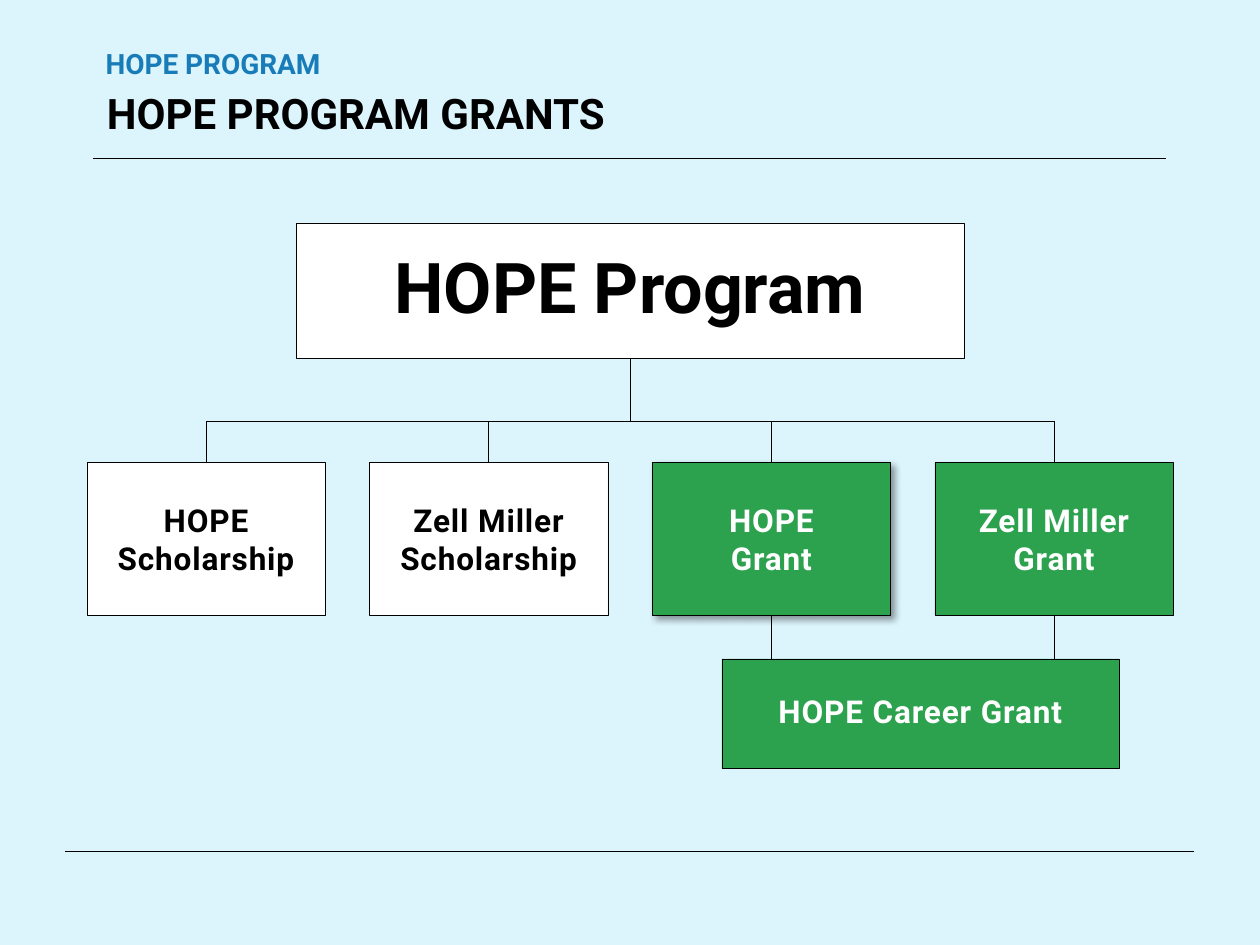
"""Build the HOPE Program Grants organisation chart slide."""
from dataclasses import dataclass

from lxml import etree
from pptx import Presentation
from pptx.dml.color import RGBColor
from pptx.enum.shapes import MSO_CONNECTOR, MSO_SHAPE
from pptx.enum.text import MSO_ANCHOR, PP_ALIGN
from pptx.oxml.ns import qn
from pptx.util import Inches, Pt

RECTANGLE = MSO_SHAPE.RECTANGLE
STRAIGHT = MSO_CONNECTOR.STRAIGHT
TOP, MIDDLE = MSO_ANCHOR.TOP, MSO_ANCHOR.MIDDLE
LEFT, CENTER = PP_ALIGN.LEFT, PP_ALIGN.CENTER
TOP_SIDE, BOTTOM_SIDE = 0, 2
UNIT = Inches(0.1)
COLUMNS, ROWS = 100, 75


@dataclass(frozen=True)
class Theme:
    font: str = "Roboto"
    background: RGBColor = RGBColor.from_string("DCF4FC")
    black: RGBColor = RGBColor.from_string("000000")
    white: RGBColor = RGBColor.from_string("FFFFFF")
    blue: RGBColor = RGBColor.from_string("187CB8")
    green: RGBColor = RGBColor.from_string("2CA14E")
    title_size: int = 24
    section_size: int = 16
    root_size: int = 40
    branch_size: int = 18
    rule_width: float = 0.5
    border_width: float = 0.25


theme = Theme()
presentation = Presentation()
presentation.slide_width = COLUMNS * UNIT
presentation.slide_height = ROWS * UNIT
slide = presentation.slides.add_slide(presentation.slide_layouts[6])
slide.background.fill.solid()
slide.background.fill.fore_color.rgb = theme.background


def write(shape, lines, size, color, align, anchor, inset, line_spacing, tracking=0):
    frame = shape.text_frame
    frame.word_wrap = True
    frame.vertical_anchor = anchor
    frame.margin_left = frame.margin_right = Inches(inset[0])
    frame.margin_top = frame.margin_bottom = Inches(inset[1])
    for index, line in enumerate(lines):
        paragraph = frame.add_paragraph() if index else frame.paragraphs[0]
        paragraph.alignment = align
        paragraph.line_spacing = line_spacing
        run = paragraph.add_run()
        run.text = line
        run.font.name = theme.font
        run.font.size = Pt(size)
        run.font.bold = True
        run.font.color.rgb = color
        if tracking:
            run._r.get_or_add_rPr().set("spc", str(tracking))


def draw_line(start_column, start_row, end_column, end_row):
    ends = [round(value * UNIT) for value in (start_column, start_row, end_column, end_row)]
    connector = slide.shapes.add_connector(STRAIGHT, *ends)
    connector.line.color.rgb = theme.black
    connector.line.width = Pt(theme.rule_width)
    etree.SubElement(connector._element.spPr, qn("a:effectLst"))
    return connector


draw_line(5.2, 67.6, 94.8, 67.6)
draw_line(7.4, 12.6, 92.5, 12.6)

headings = [
    ("HOPE PROGRAM GRANTS", 7.5, 6.7, 5.3, theme.title_size, theme.black, 0.07),
    ("HOPE PROGRAM", 7.4, 3.5, 4.2, theme.section_size, theme.blue, 0.05),
]
for text, column, row, height, size, color, inset in headings:
    bounds = [round(value * UNIT) for value in (column, row, 85, height)]
    heading = slide.shapes.add_textbox(*bounds)
    write(heading, [text], size, color, LEFT, TOP, (0.1, inset), 0.9)

branch_left, branch_top, branch_width, branch_height = 6.9, 36.7, 18.9, 12.15
branch_pitch = (74.2 - branch_left) / 3
bus_row = 33.45
branch_bottom = branch_top + branch_height
root_bottom, career_top = 28.4, 52.3

branches = [
    (["HOPE", "Scholarship"], theme.white, theme.black),
    (["Zell Miller", "Scholarship"], theme.white, theme.black),
    (["HOPE", "Grant"], theme.green, theme.white),
    (["Zell Miller", "Grant"], theme.green, theme.white),
]
boxes = [
    (["HOPE Program"], 23.5, 17.7, 53, 10.7, theme.white, theme.black, theme.root_size, 0.9, 0),
    (["HOPE Career Grant"], 57.3, career_top, 31.5, 8.7, theme.green, theme.white,
     theme.branch_size, 0.9, 50),
]
for index, (lines, fill, color) in enumerate(branches):
    boxes.append((lines, branch_left + index * branch_pitch, branch_top, branch_width,
                  branch_height, fill, color, theme.branch_size, 1.0, 50))

shapes = []
for lines, column, row, width, height, fill, color, size, spacing, tracking in boxes:
    bounds = [round(value * UNIT) for value in (column, row, width, height)]
    shape = slide.shapes.add_shape(RECTANGLE, *bounds)
    shape.shadow.inherit = False
    shape.fill.solid()
    shape.fill.fore_color.rgb = fill
    shape.line.color.rgb = theme.black
    shape.line.width = Pt(theme.border_width)
    write(shape, lines, size, color, CENTER, MIDDLE, (0.01, 0.01), spacing, tracking)
    shapes.append(shape)
root, career, *branch_shapes = shapes

effects = branch_shapes[2]._element.spPr.find(qn("a:effectLst"))
shadow = etree.SubElement(effects, qn("a:outerShdw"), blurRad=str(Pt(4)), dist=str(Pt(3)),
                          dir=str(45 * 60000), algn="tl", rotWithShape="0")
shadow_color = etree.SubElement(shadow, qn("a:srgbClr"), val=str(theme.black))
etree.SubElement(shadow_color, qn("a:alpha"), val="40000")

centers = [branch_left + index * branch_pitch + branch_width / 2 for index in range(len(branches))]
draw_line(50, root_bottom, 50, bus_row).begin_connect(root, BOTTOM_SIDE)
draw_line(centers[0], bus_row, centers[-1], bus_row)
for center, shape in zip(centers, branch_shapes):
    draw_line(center, bus_row, center, branch_top).end_connect(shape, TOP_SIDE)
for center, shape in zip(centers[2:], branch_shapes[2:]):
    draw_line(center, branch_bottom, center, career_top).begin_connect(shape, BOTTOM_SIDE)

presentation.save("out.pptx")
